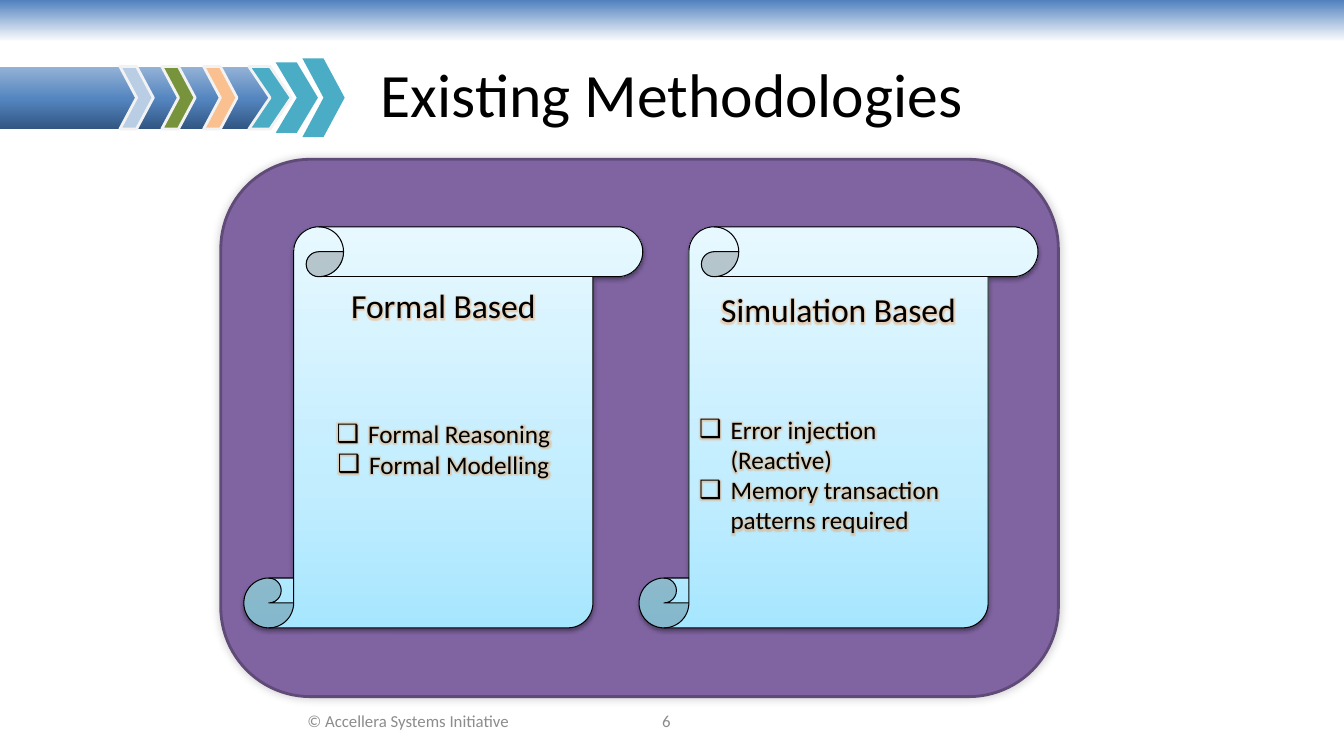
import lxml.etree
import pptx
import pptx.dml.color
import pptx.enum.shapes
import pptx.enum.text
import pptx.oxml.ns
import pptx.util

Pt = pptx.util.Pt
SHAPE = pptx.enum.shapes.MSO_SHAPE
ALIGN = pptx.enum.text.PP_ALIGN
ANCHOR = pptx.enum.text.MSO_ANCHOR


def rgb(hex_code):
    return pptx.dml.color.RGBColor.from_string(hex_code)


def add_node(parent, tag, **attributes):
    node = lxml.etree.SubElement(parent, pptx.oxml.ns.qn("a:" + tag))
    for key, value in attributes.items():
        node.set(key, str(value))
    return node


def add_colour(parent, hex_code, alpha=100):
    colour = add_node(parent, "srgbClr", val=hex_code)
    if alpha < 100:
        add_node(colour, "alpha", val=alpha * 1000)


def write(paragraph, text, size, colour="000000", align=ALIGN.CENTER,
          font="Calibri", bullet=None, indent=22.5, glow=None):
    if bullet:
        properties = paragraph._p.get_or_add_pPr()
        properties.set("marL", str(Pt(indent)))
        properties.set("indent", str(-Pt(indent)))
        add_node(properties, "buChar", char=bullet)
    paragraph.alignment = align
    paragraph.space_before = Pt(0)
    run = paragraph.add_run()
    run.text = text
    run.font.size = Pt(size)
    run.font.color.rgb = rgb(colour)
    run.font.name = font
    if glow:
        effects = add_node(run._r.rPr, "effectLst")
        add_colour(add_node(effects, "glow", rad=Pt(5)), glow, 40)
        run._r.rPr.find(pptx.oxml.ns.qn("a:latin")).addprevious(effects)


class Slide:
    glow = "F79646"
    bullet = "❑"
    footer_grey = "8C8C8C"

    def __init__(self, slide):
        self.slide = slide

    def shape(self, kind, box, fill=None, line=None, line_width=2,
              gradient=None, angle=90, shadow=None):
        item = self.slide.shapes.add_shape(kind, *map(Pt, box))
        item.shadow.inherit = False
        properties = item._element.spPr
        if gradient:
            item.fill.gradient()
            grad = properties.find(pptx.oxml.ns.qn("a:gradFill"))
            for child in list(grad):
                grad.remove(child)
            stops = add_node(grad, "gsLst")
            for position, colour in gradient:
                add_colour(add_node(stops, "gs", pos=position * 1000), colour)
            add_node(grad, "lin", ang=angle * 60000, scaled=0)
        else:
            item.fill.solid()
            item.fill.fore_color.rgb = rgb(fill)
        if line:
            item.line.color.rgb = rgb(line)
            item.line.width = Pt(line_width)
        else:
            item.line.fill.background()
        if shadow:
            alpha, blur, distance, direction = shadow
            effects = properties.find(pptx.oxml.ns.qn("a:effectLst"))
            outer = add_node(effects, "outerShdw", blurRad=Pt(blur), dist=Pt(distance),
                             dir=direction * 60000, rotWithShape=0)
            add_colour(outer, "000000", alpha)
        return item

    def placeholder(self, index, box, anchor):
        item = self.slide.placeholders[index]
        item.left, item.top, item.width, item.height = map(Pt, box)
        self.slide.shapes._spTree.append(item._element)
        frame = item.text_frame
        frame.auto_size = pptx.enum.text.MSO_AUTO_SIZE.NONE
        frame.vertical_anchor = anchor
        return frame

    def title(self, text, box):
        frame = self.placeholder(0, box, ANCHOR.MIDDLE)
        write(frame.paragraphs[0], text, 44)

    def footer(self, text, box):
        frame = self.slide.shapes.add_textbox(*map(Pt, box)).text_frame
        frame.word_wrap = True
        frame.vertical_anchor = ANCHOR.MIDDLE
        write(frame.paragraphs[0], text, 12, colour=self.footer_grey)

    def scroll(self, left, heading, heading_inset):
        scroll = self.shape(SHAPE.VERTICAL_SCROLL, (left, 162, 285, 286.5),
                            gradient=[(0, "A7E6FF"), (35, "C1EDFF"), (100, "E7F8FF")],
                            angle=270, line="000000", line_width=0.75,
                            shadow=(38, 3.1, 1.6, 90))
        frame = scroll.text_frame
        frame.word_wrap = True
        frame.vertical_anchor = ANCHOR.TOP
        frame.margin_top = Pt(heading_inset)
        write(frame.paragraphs[0], heading, 24, glow=self.glow)

    def bullets(self, index, box, entries, align):
        frame = self.placeholder(index, box, ANCHOR.TOP)
        frame.margin_top = Pt(0)
        for number, entry in enumerate(entries):
            paragraph = frame.add_paragraph() if number else frame.paragraphs[0]
            write(paragraph, entry, 18, align=align, bullet=self.bullet, glow=self.glow)


def main():
    deck = pptx.Presentation()
    deck.slide_width, deck.slide_height = Pt(960), Pt(540)
    page = Slide(deck.slides.add_slide(deck.slide_layouts[3]))

    page.shape(SHAPE.RECTANGLE, (0, 0, 960, 30),
               gradient=[(0, "4F81BD"), (100, "FFFFFF")])
    page.title("Existing Methodologies", (48, 21.6, 864, 90))
    page.footer("© Accellera Systems Initiative", (175.7, 500.4, 231.8, 28.8))
    page.footer("6", (383.8, 500.4, 184.3, 28.8))

    page.shape(SHAPE.RECTANGLE, (0, 47.5, 193.7, 44.6), angle=270,
               gradient=[(0, "315683"), (48, "5485BF"), (100, "95B3D7")])
    for step, colour in enumerate(("B9CDE5", "77933C", "FAC090")):
        page.shape(SHAPE.CHEVRON, (85.7 + 29.9 * step, 47.5, 23.8, 44.6),
                   fill=colour, line="F2F2F2")
    for step, outline in enumerate(("F2F2F2", None, None)):
        height = 44.6 + 5.8 * step
        page.shape(SHAPE.CHEVRON, (177.8 + 19.1 * step, 69.8 - height / 2, 30.2, height),
                   fill="4BACC6", line=outline)

    page.shape(SHAPE.ROUNDED_RECTANGLE, (157.7, 113.8, 598.3, 383.8), fill="8064A2",
               line="5F4A78", shadow=(20, 6, 0, 225))
    methods = (
        ("Formal Based", 6, 299, ALIGN.CENTER,
         ("Formal Reasoning", "Formal Modelling")),
        ("Simulation Based", 9, 295.7, ALIGN.LEFT,
         ("Error injection (Reactive)", "Memory transaction patterns required")),
    )
    for column, (heading, inset, list_top, align, entries) in enumerate(methods):
        left = 174.2 + 282.3 * column
        page.scroll(left, heading, inset)
        page.bullets(column + 1, (left + 35.6, list_top, 213.8, 100), entries, align)

    deck.save("out.pptx")


if __name__ == "__main__":
    main()
